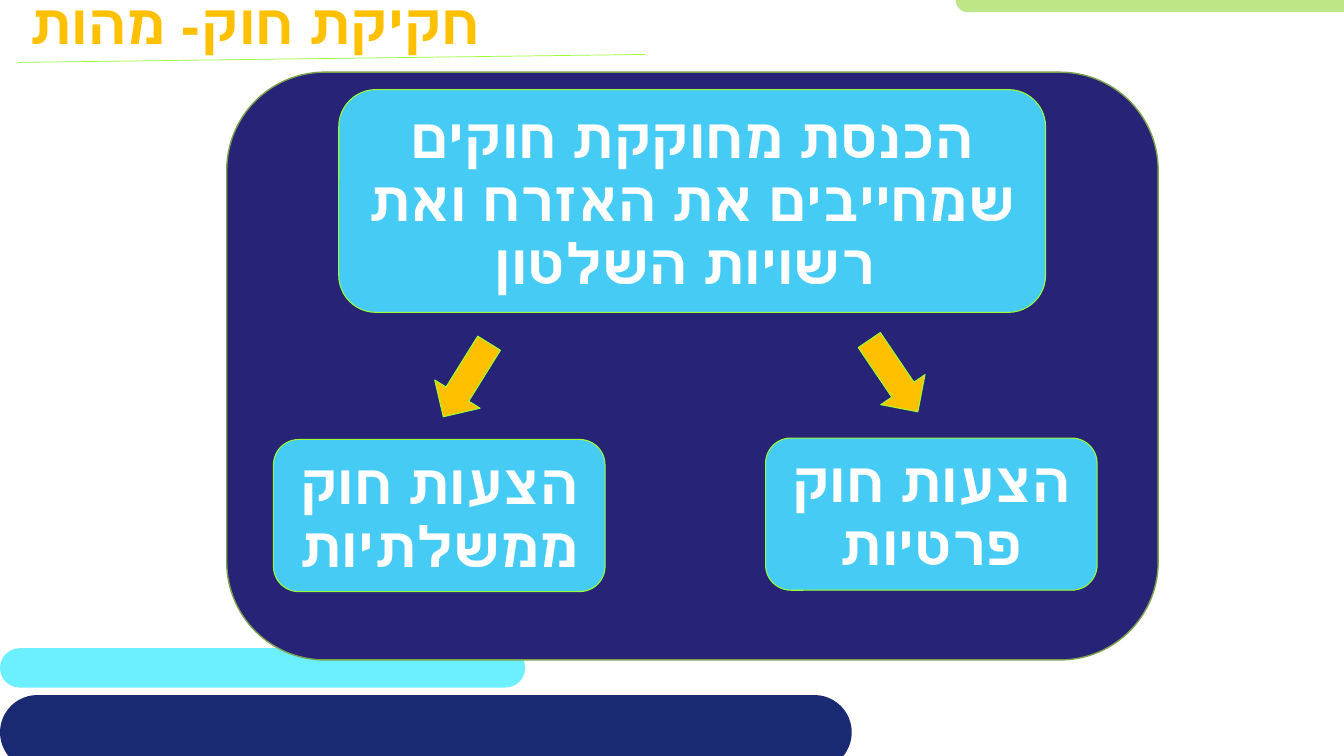
"""Build a slide on the essence of legislation with two kinds of bills."""
from dataclasses import dataclass

import lxml.etree
import pptx
import pptx.dml.color
import pptx.enum.shapes
import pptx.enum.text
import pptx.oxml.ns
import pptx.util

Pt = pptx.util.Pt
MSO_SHAPE = pptx.enum.shapes.MSO_SHAPE
PP_ALIGN = pptx.enum.text.PP_ALIGN
MSO_ANCHOR = pptx.enum.text.MSO_ANCHOR


@dataclass(frozen=True)
class Theme:
    font: str = "League Spartan"
    text_size: float = 40
    line_spacing: float = 45
    navy: str = "192A72"
    cyan: str = "6CF0FF"
    green: str = "BDE686"
    panel: str = "272377"
    panel_line: str = "7DA24B"
    box: str = "46CBF5"
    gold: str = "FFC000"
    lime: str = "99FF33"
    white: str = "FFFFFF"


@dataclass(frozen=True)
class Block:
    left: float
    top: float
    width: float
    height: float
    fill: str
    line: str = ""
    line_width: float = 0.75
    text: str = ""
    kind: MSO_SHAPE = MSO_SHAPE.ROUNDED_RECTANGLE
    corner: float = 0.1667
    rotation: float = 0


THEME = Theme()


def bill_box(left: float, top: float, text: str) -> Block:
    return Block(left, top, 236.9, 108.7, THEME.box, THEME.lime, text=text)


def arrow(left: float, top: float, rotation: float) -> Block:
    return Block(left, top, 38.2, 61.9, THEME.gold, THEME.lime,
                 kind=MSO_SHAPE.DOWN_ARROW, rotation=rotation)


BARS = [
    Block(0, 463, 375.1, 28.1, THEME.cyan, corner=0.5),
    Block(682.6, -8.6, 417.6, 17.3, THEME.green, corner=0.5),
    Block(0, 496.5, 608.4, 53.3, THEME.navy, corner=0.5),
]
DIAGRAM = [
    Block(162, 51.6, 665.3, 419.8, THEME.panel, THEME.panel_line, 1),
    Block(242, 64, 504.9, 159.1, THEME.box, THEME.lime,
          text="הכנסת מחוקקת חוקים שמחייבים את האזרח ואת רשויות השלטון "),
    arrow(619.2, 237.6, 325.9),
    bill_box(546.8, 312.9, "הצעות חוק פרטיות"),
    arrow(313.9, 240.5, 31.9),
    bill_box(195.3, 313.9, "הצעות חוק ממשלתיות"),
]


def rgb(value: str) -> pptx.dml.color.RGBColor:
    return pptx.dml.color.RGBColor.from_string(value)


def format_text(p, color: str, align: PP_ALIGN) -> None:
    p.alignment = align
    for r in p.runs:
        r.font.name = THEME.font
        r.font.size = Pt(THEME.text_size)
        r.font.bold = True
        r.font.color.rgb = rgb(color)
        cs = lxml.etree.SubElement(r.font._element, pptx.oxml.ns.qn("a:cs"))
        cs.set("typeface", THEME.font)


def draw_block(slide, block: Block) -> None:
    sp = slide.shapes.add_shape(block.kind, Pt(block.left), Pt(block.top),
                                Pt(block.width), Pt(block.height))
    sp.shadow.inherit = False
    sp.rotation = block.rotation
    if block.kind == MSO_SHAPE.ROUNDED_RECTANGLE:
        sp.adjustments[0] = block.corner
    sp.fill.solid()
    sp.fill.fore_color.rgb = rgb(block.fill)
    if block.line:
        sp.line.color.rgb = rgb(block.line)
        sp.line.width = Pt(block.line_width)
    else:
        sp.line.fill.background()
    if block.text:
        tf = sp.text_frame
        tf.text = block.text
        tf.word_wrap = True
        tf.vertical_anchor = MSO_ANCHOR.MIDDLE
        p = tf.paragraphs[0]
        p.line_spacing = Pt(THEME.line_spacing)
        format_text(p, THEME.white, PP_ALIGN.CENTER)


def draw_title(slide, text: str) -> None:
    sp = slide.shapes.title
    sp.left, sp.top, sp.width, sp.height = Pt(13.7), Pt(-11.5), Pt(676.8), Pt(113)
    tf = sp.text_frame
    tf.text = text
    tf.word_wrap = True
    tf.auto_size = pptx.enum.text.MSO_AUTO_SIZE.NONE
    tf.vertical_anchor = MSO_ANCHOR.TOP
    format_text(tf.paragraphs[0], THEME.gold, PP_ALIGN.LEFT)


def draw_underline(slide) -> None:
    line = slide.shapes.add_connector(
        pptx.enum.shapes.MSO_CONNECTOR.STRAIGHT,
        Pt(13), Pt(44.6), Pt(460.8), Pt(38.9))
    line.line.color.rgb = rgb(THEME.lime)
    line.line.width = Pt(0.5)
    lxml.etree.SubElement(line._element.spPr, pptx.oxml.ns.qn("a:effectLst"))


def main() -> None:
    prs = pptx.Presentation()
    prs.slide_width, prs.slide_height = Pt(960), Pt(540)
    slide = prs.slides.add_slide(prs.slide_layouts[5])
    draw_title(slide, "חקיקת חוק- מהות")
    for block in BARS + DIAGRAM:
        draw_block(slide, block)
    draw_underline(slide)
    prs.save("out.pptx")


if __name__ == "__main__":
    main()
